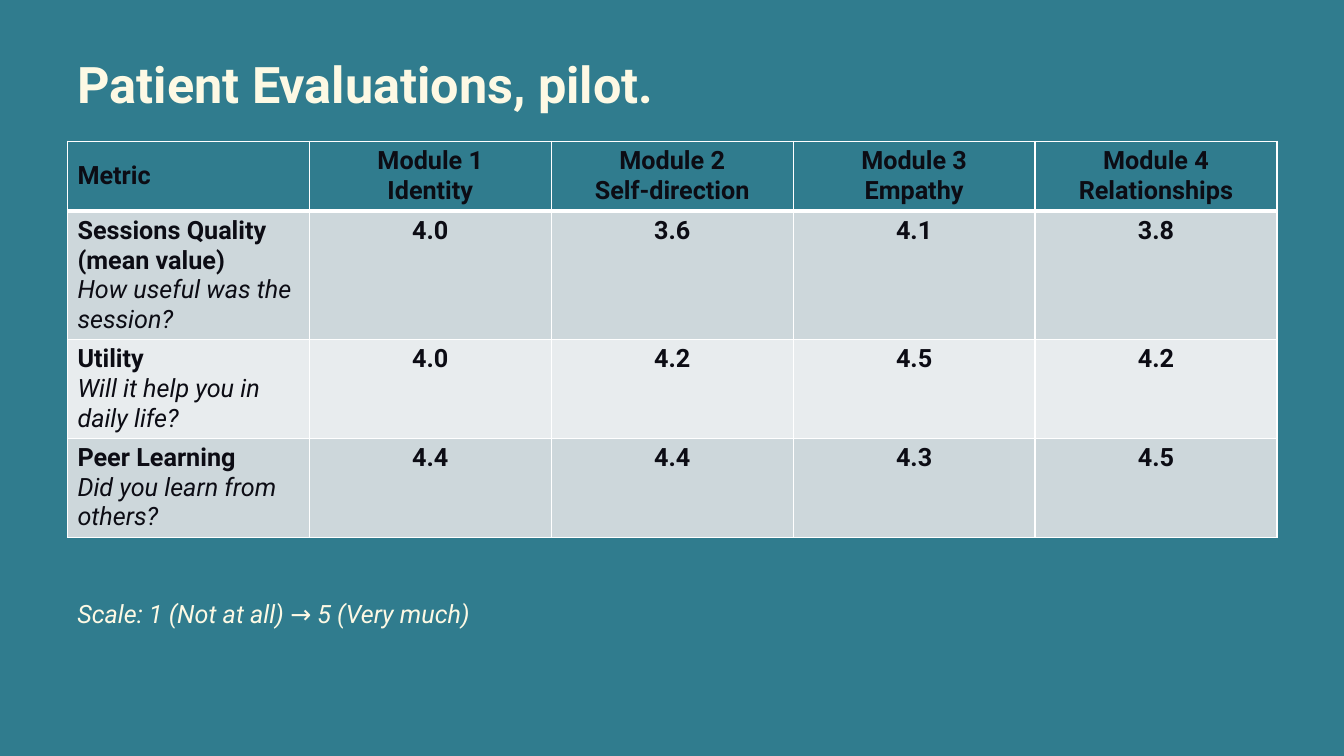
from lxml import etree
from pptx import Presentation
from pptx.dml.color import RGBColor
from pptx.enum.text import MSO_ANCHOR as Anchor, MSO_AUTO_SIZE as AutoSize, PP_ALIGN as Align
from pptx.oxml.ns import qn
from pptx.util import Cm, Pt

# Content
TITLE = "Patient Evaluations, pilot."
HEADER = ["Metric", "Module 1\vIdentity", "Module 2\vSelf-direction",
          "Module 3\vEmpathy", "Module 4\vRelationships"]
METRICS = [
    ("Sessions Quality\n(mean value)", "How useful was the session?", ["4.0", "3.6", "4.1", "3.8"]),
    ("Utility", "Will it help you in daily life?", ["4.0", "4.2", "4.5", "4.2"]),
    ("Peer Learning", "Did you learn from others?", ["4.4", "4.4", "4.3", "4.5"]),
]
SCALE = "Scale: 1 (Not at all) → 5 (Very much)"

# Style
FONT = "Roboto"
TEAL, CREAM, INK, WHITE = "307C8E", "FDF9E4", "0C0C14", "FFFFFF"
BANDS = ["CDD7DB", "E8ECEE"]
LEFT, WIDTH = 1.7, 30.48
ROW_HEIGHTS = [1.76, 3.23, 2.49, 2.49]


def color(hex_string):
    return RGBColor.from_string(hex_string)


def format_run(run, size, hex_string, bold=False, italic=False):
    font = run.font
    font.name, font.size = FONT, Pt(size)
    font.bold, font.italic = bold, italic
    font.color.rgb = color(hex_string)


def set_borders(cell, bottom_width):
    properties = cell._tc.get_or_add_tcPr()
    sides = [("lnL", 1), ("lnR", 1), ("lnT", 1), ("lnB", bottom_width)]
    for position, (side, width) in enumerate(sides):
        line = etree.Element(qn("a:" + side), w=str(Pt(width)))
        fill = etree.SubElement(line, qn("a:solidFill"))
        etree.SubElement(fill, qn("a:srgbClr"), val=WHITE)
        properties.insert(position, line)


# Slide
presentation = Presentation()
presentation.slide_width, presentation.slide_height = Cm(33.87), Cm(19.05)
slide = presentation.slides.add_slide(presentation.slide_layouts[5])
slide.background.fill.solid()
slide.background.fill.fore_color.rgb = color(TEAL)

# Title
title = slide.shapes.title
title.left, title.top, title.width, title.height = Cm(LEFT), Cm(0.99), Cm(WIDTH), Cm(2.08)
title.text_frame.text = TITLE
title.text_frame.auto_size = AutoSize.NONE
title.text_frame.vertical_anchor = Anchor.MIDDLE
paragraph = title.text_frame.paragraphs[0]
paragraph.alignment, paragraph.line_spacing = Align.LEFT, 1.1
format_run(paragraph.runs[0], 36, CREAM, bold=True)

# Table
rows = [HEADER] + [[f"{label}\v{question}"] + values for label, question, values in METRICS]
table = slide.shapes.add_table(len(rows), len(HEADER), Cm(LEFT), Cm(3.56),
                               Cm(WIDTH), Cm(sum(ROW_HEIGHTS))).table
for row_index, row in enumerate(rows):
    table.rows[row_index].height = Cm(ROW_HEIGHTS[row_index])
    is_header = row_index == 0
    for column_index, text in enumerate(row):
        cell = table.cell(row_index, column_index)
        cell.fill.solid()
        cell.fill.fore_color.rgb = color(TEAL if is_header else BANDS[(row_index - 1) % 2])
        set_borders(cell, 3 if is_header else 1)
        cell.vertical_anchor = Anchor.MIDDLE if is_header else Anchor.TOP
        cell.text_frame.text = text
        for paragraph in cell.text_frame.paragraphs:
            paragraph.alignment = Align.CENTER if column_index else Align.LEFT
            for run in paragraph.runs:
                format_run(run, 18, INK, bold=True)
        if column_index == 0 and not is_header:
            question_run = cell.text_frame.paragraphs[-1].runs[-1]
            format_run(question_run, 18, INK, italic=True)

# Scale note
note = slide.shapes.add_textbox(Cm(LEFT), Cm(14.94), Cm(21.67), Cm(1.02))
note.text_frame.word_wrap = True
note.text_frame.auto_size = AutoSize.SHAPE_TO_FIT_TEXT
note.text_frame.text = SCALE
format_run(note.text_frame.paragraphs[0].runs[0], 18, CREAM, italic=True)

presentation.save("out.pptx")
